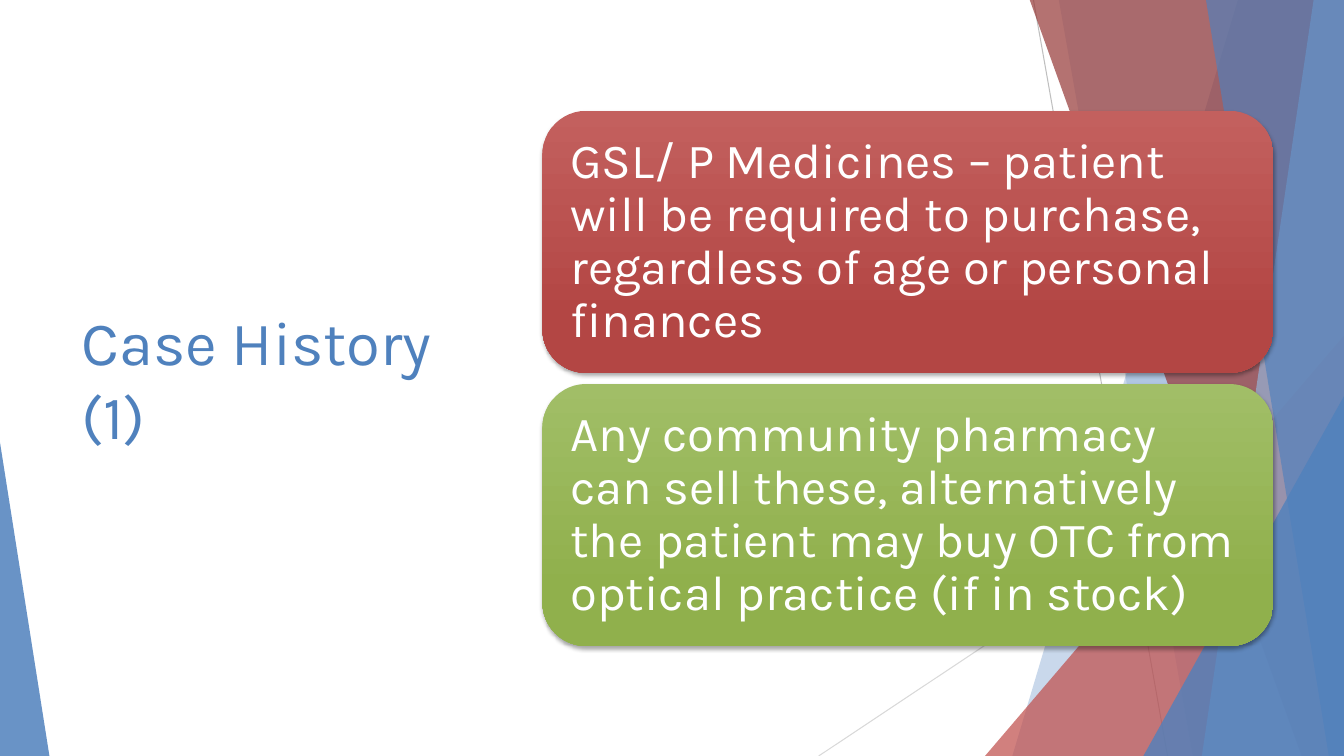
import pptx
import pptx.util
import pptx.dml.color
import pptx.enum.shapes
import pptx.enum.text
import pptx.oxml
import pptx.oxml.ns

Inches = pptx.util.Inches
Pt = pptx.util.Pt
Kind = pptx.enum.shapes.MSO_SHAPE
WIDE, HIGH, TOP = 13.33, 7.5, -0.01

COLORS = {
    "blue": "4F81BD", "pale": "95B3D7", "red": "C0504D", "wine": "953735",
    "gray": "BFBFBF", "mist": "D9D9D9", "white": "FFFFFF",
    "rose": "C3605E", "brick": "B34644", "lime": "A1BE67", "moss": "90B04C",
}
TITLE = "Case History (1)"
CARDS = [
    ("GSL/ P Medicines – patient will be required to purchase, "
     "regardless of age or personal finances", "rose", "brick"),
    ("Any community pharmacy can sell these, alternatively the patient "
     "may buy OTC from optical practice (if in stock)", "lime", "moss"),
]
LINES = [
    ((10.25, 0), (11.58, HIGH), "gray"),
    ((WIDE, 4.03), (8.12, HIGH), "mist"),
]
# Bands: x at top, x at bottom; each runs to the right edge.
# Wedges: left, top, width, place of the tip; each stands on the bottom edge.
DECOR = [
    ("band", (12.28, 10.04), "blue", 30),
    ("band", (10.5, 11.83), "blue", 20),
    ("wedge", (9.77, 3.33, 3.56, 1), "red", 72),
    ("band", (10.21, 12.91), "wine", 70),
    ("band", (13.03, 11.92), "pale", 70),
    ("band", (11.96, 13.18), "blue", 65),
    ("wedge", (11.34, 3.93, 1.99, 1), "blue", 80),
    ("wedge", (0, 4.39, 0.49, 0), "blue", 85),
]
CARD = {"left": 5.38, "top": 1.1, "wide": 7.25, "high": 2.6, "step": 2.71}


def rgb(name):
    return pptx.dml.color.RGBColor.from_string(COLORS[name])


def write(shape, text, size, color, inset=0.1, space=None):
    frame = shape.text_frame
    frame.word_wrap = True
    frame.auto_size = pptx.enum.text.MSO_AUTO_SIZE.NONE
    frame.vertical_anchor = pptx.enum.text.MSO_ANCHOR.MIDDLE
    frame.margin_left = frame.margin_right = Inches(inset)
    frame.margin_top = frame.margin_bottom = Inches(min(inset, 0.15))
    para = frame.paragraphs[0]
    para.alignment = pptx.enum.text.PP_ALIGN.LEFT
    para.line_spacing = space
    run = para.add_run()
    run.text = text
    run.font.name = "Karla"
    run.font.size = Pt(size)
    run.font.color.rgb = rgb(color)


def rule(slide, start, end, color):
    line = slide.shapes.add_connector(
        pptx.enum.shapes.MSO_CONNECTOR.STRAIGHT,
        *(Inches(n) for n in start + end))
    line.line.color.rgb = rgb(color)
    line.line.width = Pt(0.75)
    props = line._element.spPr
    props.append(props.makeelement(pptx.oxml.ns.qn("a:effectLst"), {}))


def band(slide, top, base):
    points = [(top, TOP), (WIDE, TOP), (WIDE, HIGH), (base, HIGH)]
    points = [(Inches(x), Inches(y)) for x, y in points]
    build = slide.shapes.build_freeform(*points[0])
    build.add_line_segments(points[1:])
    return build.convert_to_shape()


def wedge(slide, left, top, wide, tip):
    shape = slide.shapes.add_shape(
        Kind.ISOSCELES_TRIANGLE, Inches(left), Inches(top),
        Inches(wide), Inches(HIGH - top))
    shape.adjustments[0] = tip
    return shape


def tint(shape, color, alpha):
    """Fill with a see-through colour, without line or shadow."""
    shape.shadow.inherit = False
    shape.line.fill.background()
    shape.fill.solid()
    shape.fill.fore_color.rgb = rgb(color)
    node = shape._element.spPr.find(".//" + pptx.oxml.ns.qn("a:srgbClr"))
    node.append(node.makeelement(
        pptx.oxml.ns.qn("a:alpha"), {"val": str(alpha * 1000)}))


def shade(shape):
    """Give a soft shadow straight below the shape."""
    shape.shadow.inherit = False
    effects = shape._element.spPr.find(pptx.oxml.ns.qn("a:effectLst"))
    effects.append(pptx.oxml.parse_xml(
        f'<a:outerShdw {pptx.oxml.ns.nsdecls("a")} blurRad="{Pt(3)}" '
        f'dist="{Pt(2)}" dir="5400000" rotWithShape="0">'
        '<a:srgbClr val="000000"><a:alpha val="35000"/></a:srgbClr>'
        '</a:outerShdw>'))


def card(slide, row, text, light, dark):
    shape = slide.shapes.add_shape(
        Kind.ROUNDED_RECTANGLE, Inches(CARD["left"]),
        Inches(CARD["top"] + row * CARD["step"]),
        Inches(CARD["wide"]), Inches(CARD["high"]))
    shape.line.fill.background()
    shape.fill.gradient()
    shape.fill.gradient_angle = 270
    for stop, place, color in zip(
            shape.fill.gradient_stops, (0, 0.78), (light, dark)):
        stop.position = place
        stop.color.rgb = rgb(color)
    shade(shape)
    write(shape, text, 35, "white", inset=0.15, space=0.9)


def main():
    deck = pptx.Presentation()
    deck.slide_width, deck.slide_height = Inches(WIDE), Inches(HIGH)
    slide = deck.slides.add_slide(deck.slide_layouts[5])
    for start, end, color in LINES:
        rule(slide, start, end, color)
    makers = {"band": band, "wedge": wedge}
    for kind, form, color, alpha in DECOR:
        tint(makers[kind](slide, *form), color, alpha)
    title = slide.shapes.title
    title.left, title.top = Inches(0.71), Inches(1.51)
    title.width, title.height = Inches(3.88), Inches(4.48)
    write(title, TITLE, 44, "blue")
    for row, item in enumerate(CARDS):
        card(slide, row, *item)
    deck.save("out.pptx")


if __name__ == "__main__":
    main()
